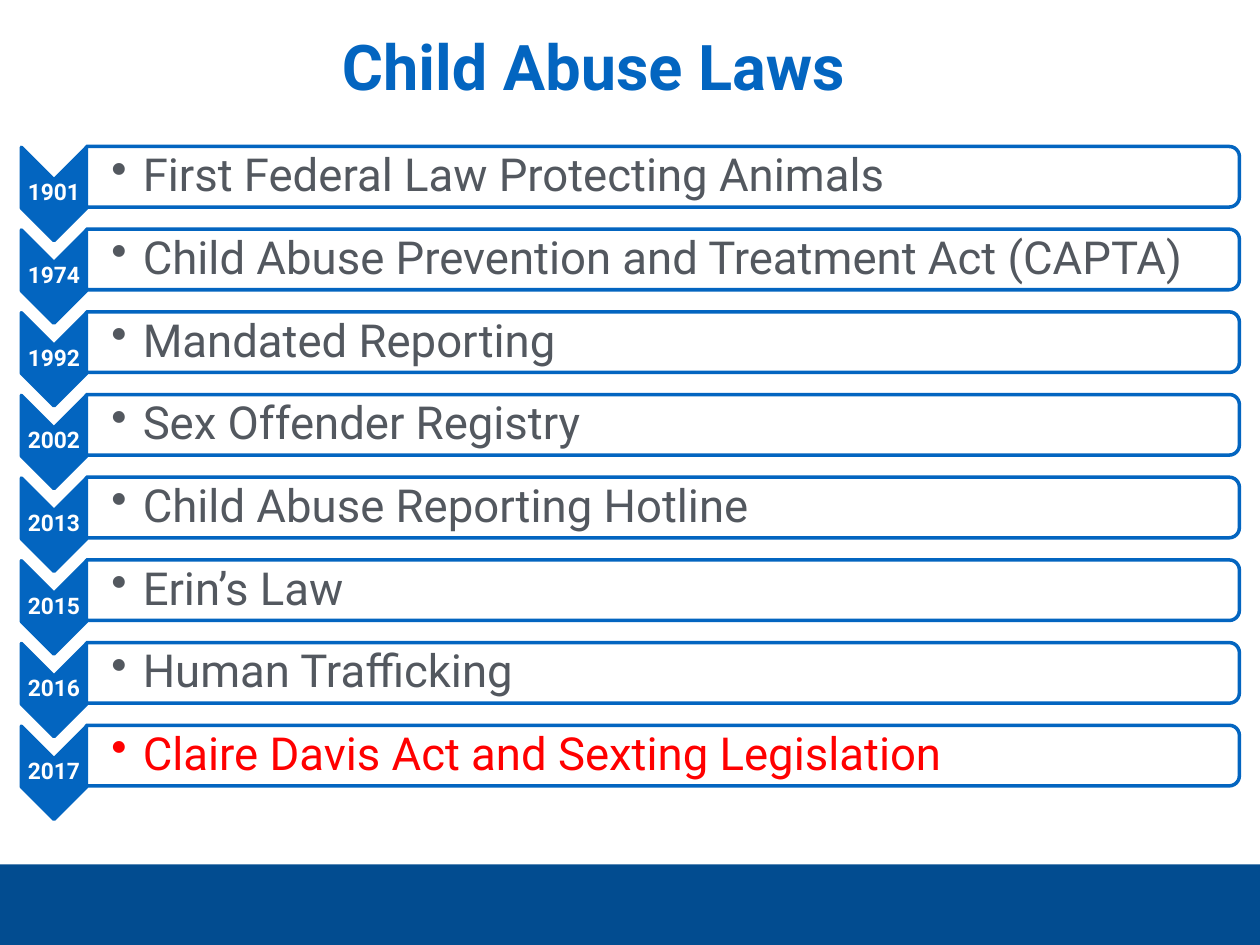
from lxml import etree
from pptx import Presentation
from pptx import util as u
from pptx.dml.color import RGBColor
from pptx.enum import shapes, text
from pptx.oxml import ns

BLUE = RGBColor(0x03, 0x65, 0xC0)
NAVY = RGBColor(0x02, 0x4C, 0x90)
GREY = RGBColor(0x53, 0x58, 0x5F)
RED = RGBColor(0xFF, 0x00, 0x00)
WHITE = RGBColor(0xFF, 0xFF, 0xFF)

LAWS = [
    ("1901", "First Federal Law Protecting Animals", GREY),
    ("1974", "Child Abuse Prevention and Treatment Act (CAPTA)", GREY),
    ("1992", "Mandated Reporting", GREY),
    ("2002", "Sex Offender Registry", GREY),
    ("2013", "Child Abuse Reporting Hotline", GREY),
    ("2015", "Erin’s Law", GREY),
    ("2016", "Human Trafficking", GREY),
    ("2017", "Claire Davis Act and Sexting Legislation", RED),
]
ROW_PITCH = 47.25


def write_text(frame, words, *, size, color, bold=False, align=text.PP_ALIGN.LEFT,
               anchor=text.MSO_ANCHOR.MIDDLE, insets=(0, 0, 0, 0),
               spacing=None, bullet_indent=0, font="Roboto"):
    """Fill a text frame with one formatted paragraph."""
    frame.word_wrap = True
    frame.auto_size = text.MSO_AUTO_SIZE.NONE
    frame.vertical_anchor = anchor
    (frame.margin_left, frame.margin_top,
     frame.margin_right, frame.margin_bottom) = map(u.Pt, insets)
    frame.text = words
    paragraph = frame.paragraphs[0]
    paragraph.alignment = align
    if spacing:
        paragraph.line_spacing = spacing
    if bullet_indent:
        props = paragraph._p.get_or_add_pPr()
        props.set("marL", str(u.Pt(bullet_indent)))
        props.set("indent", str(-u.Pt(bullet_indent)))
        etree.SubElement(props, ns.qn("a:buChar")).set("char", "•")
    run_font = paragraph.runs[0].font
    run_font.name, run_font.size, run_font.bold = font, u.Pt(size), bold
    run_font.color.rgb = color


class Timeline:
    """Holds the slide and draws its kinds of element; lengths are points."""

    def __init__(self, slide, accent=BLUE, line_width=2):
        self.slide, self.accent, self.line_width = slide, accent, line_width

    def title(self, words, box):
        heading = self.slide.shapes.title
        heading.left, heading.top, heading.width, heading.height = map(u.Pt, box)
        write_text(heading.text_frame, words, size=36, color=self.accent, bold=True,
                   align=text.PP_ALIGN.CENTER, anchor=text.MSO_ANCHOR.TOP,
                   insets=(5, 3, 5, 3))

    def shape(self, preset, box, fill, line=None, rotation=0):
        item = self.slide.shapes.add_shape(preset, *map(u.Pt, box))
        item.shadow.inherit = False
        item.rotation = rotation
        item.fill.solid()
        item.fill.fore_color.rgb = fill
        if line is None:
            item.line.fill.background()
        else:
            item.line.color.rgb = line
            item.line.width = u.Pt(self.line_width)

    def label(self, words, box, **style):
        label = self.slide.shapes.add_textbox(*map(u.Pt, box))
        write_text(label.text_frame, words, spacing=0.9, **style)

    def row(self, top, year, law, color):
        # Year arrow: a chevron turned to point down
        self.shape(shapes.MSO_SHAPE.CHEVRON, (4.2, top + 7.2, 53.3, 37.3),
                   self.accent, self.accent, rotation=90)
        self.label(year, (12.2, top + 17.5, 37.3, 16), size=13, color=WHITE, bold=True,
                   align=text.PP_ALIGN.CENTER, insets=(0.7, 0.7, 0.7, 0.7))
        # Law bar: turned so that its round corners are on the right
        self.shape(shapes.MSO_SHAPE.ROUND_2_SAME_RECTANGLE,
                   (361.5, top - 313.4, 34.6, 658.8), WHITE, self.accent, rotation=90)
        self.label(law, (49.2, top + 0.5, 657.4, 31.2), size=26, color=color,
                   insets=(14.4, 1.3, 1.3, 1.3), bullet_indent=18)


def main():
    deck = Presentation()
    deck.slide_width, deck.slide_height = u.Pt(720), u.Pt(540)
    timeline = Timeline(deck.slides.add_slide(deck.slide_layouts[5]))

    # Footer band and title
    timeline.shape(shapes.MSO_SHAPE.RECTANGLE, (0, 493.9, 720, 46.1), NAVY)
    timeline.title("Child Abuse Laws", (35.3, 12.5, 607.7, 59.8))

    # One row for each law
    for index, (year, law, color) in enumerate(LAWS):
        timeline.row(85 + index * ROW_PITCH, year, law, color)

    deck.save("out.pptx")


if __name__ == "__main__":
    main()
